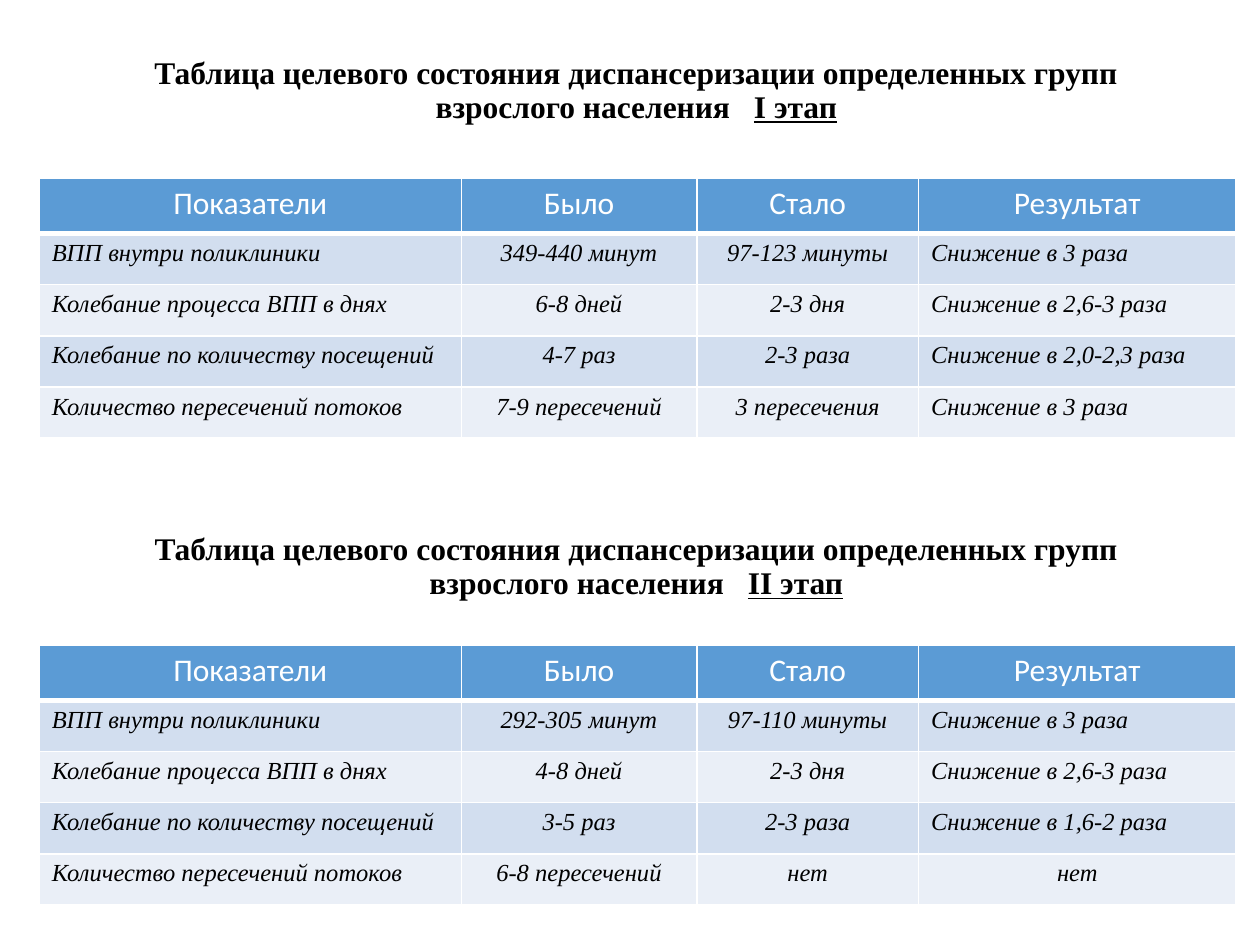
"""Build a slide with two target-state tables for the medical check-up stages."""
import pptx
import pptx.dml.color
import pptx.enum.text
import pptx.oxml
import pptx.oxml.ns
import pptx.util

Pt = pptx.util.Pt
RGBColor = pptx.dml.color.RGBColor
ALIGN = pptx.enum.text.PP_ALIGN
MIDDLE = pptx.enum.text.MSO_ANCHOR.MIDDLE

BLACK = RGBColor(0x00, 0x00, 0x00)
WHITE = RGBColor(0xFF, 0xFF, 0xFF)
HEADER_BLUE = RGBColor(0x5B, 0x9B, 0xD5)
BAND_DARK = RGBColor(0xD2, 0xDE, 0xEF)
BAND_LIGHT = RGBColor(0xEA, 0xEF, 0xF7)

SERIF = "Times New Roman"
SANS = "Calibri"
HEADING = "Таблица целевого состояния диспансеризации определенных групп взрослого населения"
COLUMNS = ["Показатели", "Было", "Стало", "Результат"]
INDICATORS = [
    "ВПП внутри поликлиники",
    "Колебание процесса ВПП в днях",
    "Колебание по количеству посещений",
    "Количество пересечений потоков",
]
STAGE_ONE = [
    ["349-440 минут", "97-123 минуты", "Снижение в 3 раза"],
    ["6-8 дней", "2-3 дня", "Снижение в 2,6-3 раза"],
    ["4-7 раз", "2-3 раза", "Снижение в 2,0-2,3 раза"],
    ["7-9 пересечений", "3 пересечения", "Снижение в 3 раза"],
]
STAGE_TWO = [
    ["292-305 минут", "97-110 минуты", "Снижение в 3 раза"],
    ["4-8 дней", "2-3 дня", "Снижение в 2,6-3 раза"],
    ["3-5 раз", "2-3 раза", "Снижение в 1,6-2 раза"],
    ["6-8 пересечений", "нет", "нет"],
]


def add_text(paragraph, text, font=SERIF, size=18, color=BLACK,
             bold=False, italic=False, underline=False, spacing=0):
    """Append a formatted run; spacing is extra character spacing in points."""
    run = paragraph.add_run()
    run.text = text
    run.font.name = font
    run.font.size = Pt(size)
    run.font.color.rgb = color
    run.font.bold = bold
    run.font.italic = italic
    run.font.underline = underline
    if spacing:
        run.font._element.set("spc", str(spacing * 100))


class SlideBuilder:
    """Hold the table style and the current slide."""

    column_widths = [241.2, 134.6, 126.7, 181.5]
    header_height = 31.7
    row_height = 29.2
    table_left = 22.4

    def __init__(self, presentation):
        """Add a title-only slide."""
        self.slide = presentation.slides.add_slide(presentation.slide_layouts[5])

    def add_title(self, top, stage):
        """Fill the title placeholder."""
        self.format_heading(self.slide.shapes.title, top, stage)

    def add_subtitle(self, top, stage):
        """Add a text box that looks like the title."""
        shape = self.slide.shapes.add_textbox(0, 0, Pt(1), Pt(1))
        self.format_heading(shape, top, stage)

    def format_heading(self, shape, top, stage):
        """Place a heading and write its text with the stage underlined."""
        shape.left, shape.top = Pt(53.3), Pt(top)
        shape.width, shape.height = Pt(620.6), Pt(51.1)
        frame = shape.text_frame
        frame.word_wrap = True
        frame.auto_size = pptx.enum.text.MSO_AUTO_SIZE.NONE
        frame.vertical_anchor = MIDDLE
        paragraph = frame.paragraphs[0]
        paragraph.alignment = ALIGN.CENTER
        paragraph.line_spacing = 0.9
        add_text(paragraph, HEADING, bold=True)
        add_text(paragraph, " ", bold=True, spacing=9)
        add_text(paragraph, stage, bold=True, underline=True)

    def add_table(self, top, results):
        """Add a banded table of indicators and their results."""
        rows = [COLUMNS] + [[name, *values] for name, values in zip(INDICATORS, results)]
        heights = [self.header_height] + [self.row_height] * len(results)
        table = self.slide.shapes.add_table(
            len(rows), len(COLUMNS), Pt(self.table_left), Pt(top),
            Pt(sum(self.column_widths)), Pt(sum(heights))).table
        for column, width in zip(table.columns, self.column_widths):
            column.width = Pt(width)
        for row_index, (values, height) in enumerate(zip(rows, heights)):
            table.rows[row_index].height = Pt(height)
            for column_index, text in enumerate(values):
                self.fill_cell(table.cell(row_index, column_index), row_index, column_index, text)

    def fill_cell(self, cell, row_index, column_index, text):
        """Write and format one table cell."""
        is_header = row_index == 0
        self.add_borders(cell, bottom=3 if is_header else 1)
        cell.fill.solid()
        paragraph = cell.text_frame.paragraphs[0]
        is_centered = is_header or column_index in (1, 2) or text == "нет"
        paragraph.alignment = ALIGN.CENTER if is_centered else ALIGN.LEFT
        if is_header:
            cell.fill.fore_color.rgb = HEADER_BLUE
            add_text(paragraph, text, font=SANS, color=WHITE)
        else:
            cell.fill.fore_color.rgb = BAND_DARK if row_index % 2 else BAND_LIGHT
            add_text(paragraph, text, size=14, italic=True)

    def add_borders(self, cell, bottom):
        """Draw white borders around a cell."""
        properties = cell._tc.get_or_add_tcPr()
        for side, width in {"lnL": 1, "lnR": 1, "lnT": 1, "lnB": bottom}.items():
            properties.append(pptx.oxml.parse_xml(
                f'<a:{side} {pptx.oxml.ns.nsdecls("a")} w="{Pt(width)}">'
                f'<a:solidFill><a:srgbClr val="{WHITE}"/></a:solidFill></a:{side}>'))


def main():
    """Create and save the presentation."""
    presentation = pptx.Presentation()
    presentation.slide_width, presentation.slide_height = Pt(720), Pt(540)
    builder = SlideBuilder(presentation)
    builder.add_title(26.6, "I этап")
    builder.add_table(101.8, STAGE_ONE)
    builder.add_subtitle(298.8, "II этап")
    builder.add_table(368.6, STAGE_TWO)
    presentation.save("out.pptx")


if __name__ == "__main__":
    main()
